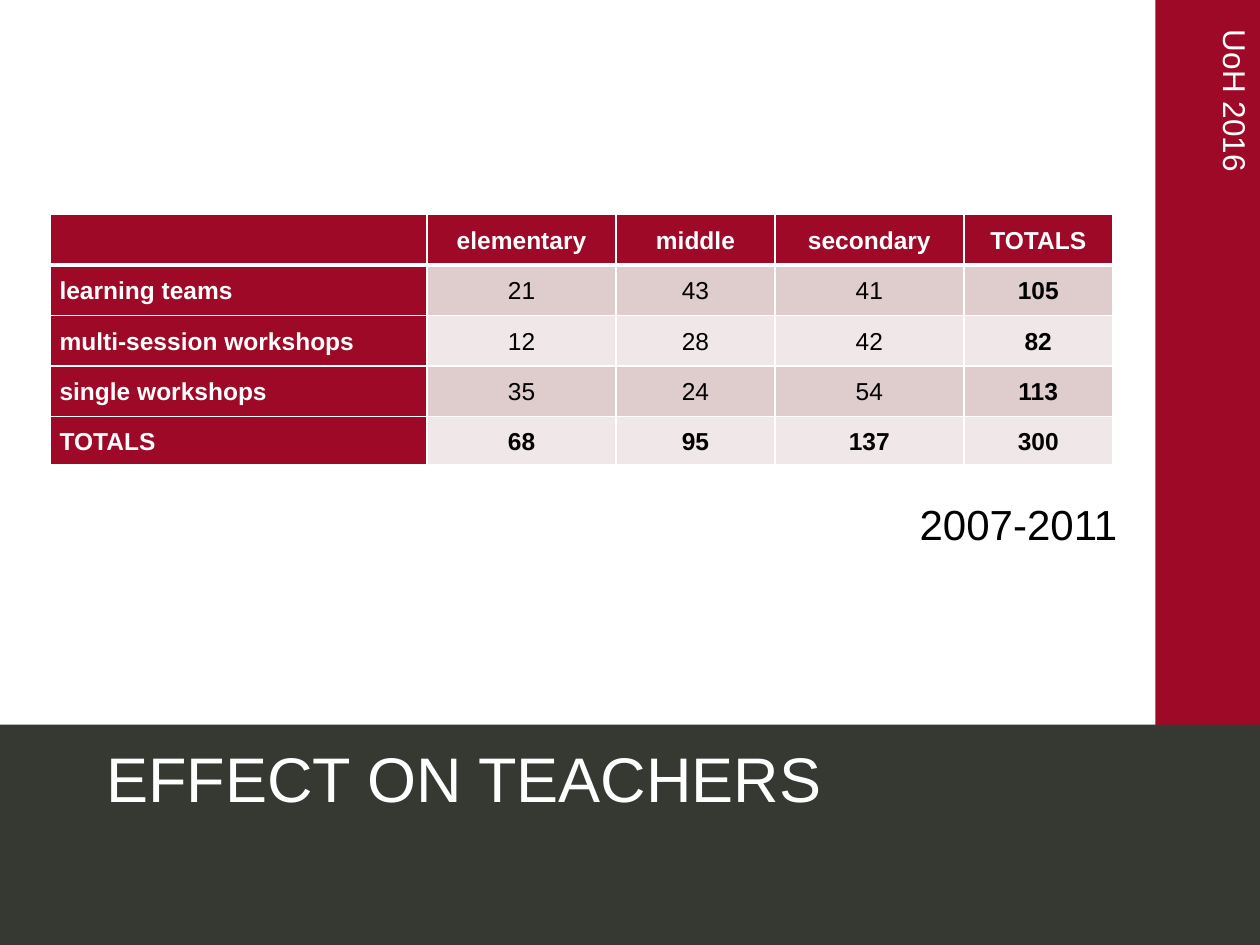
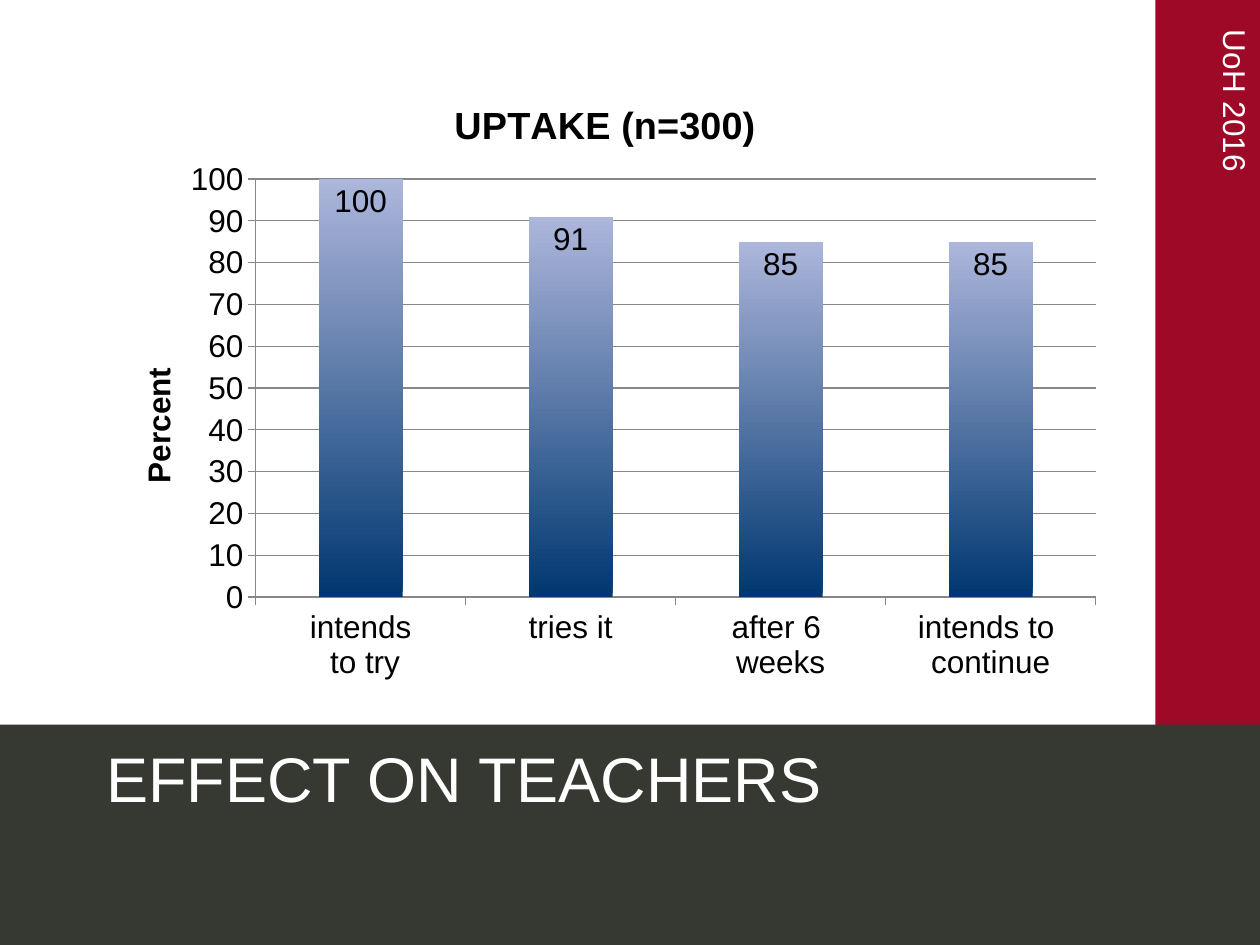
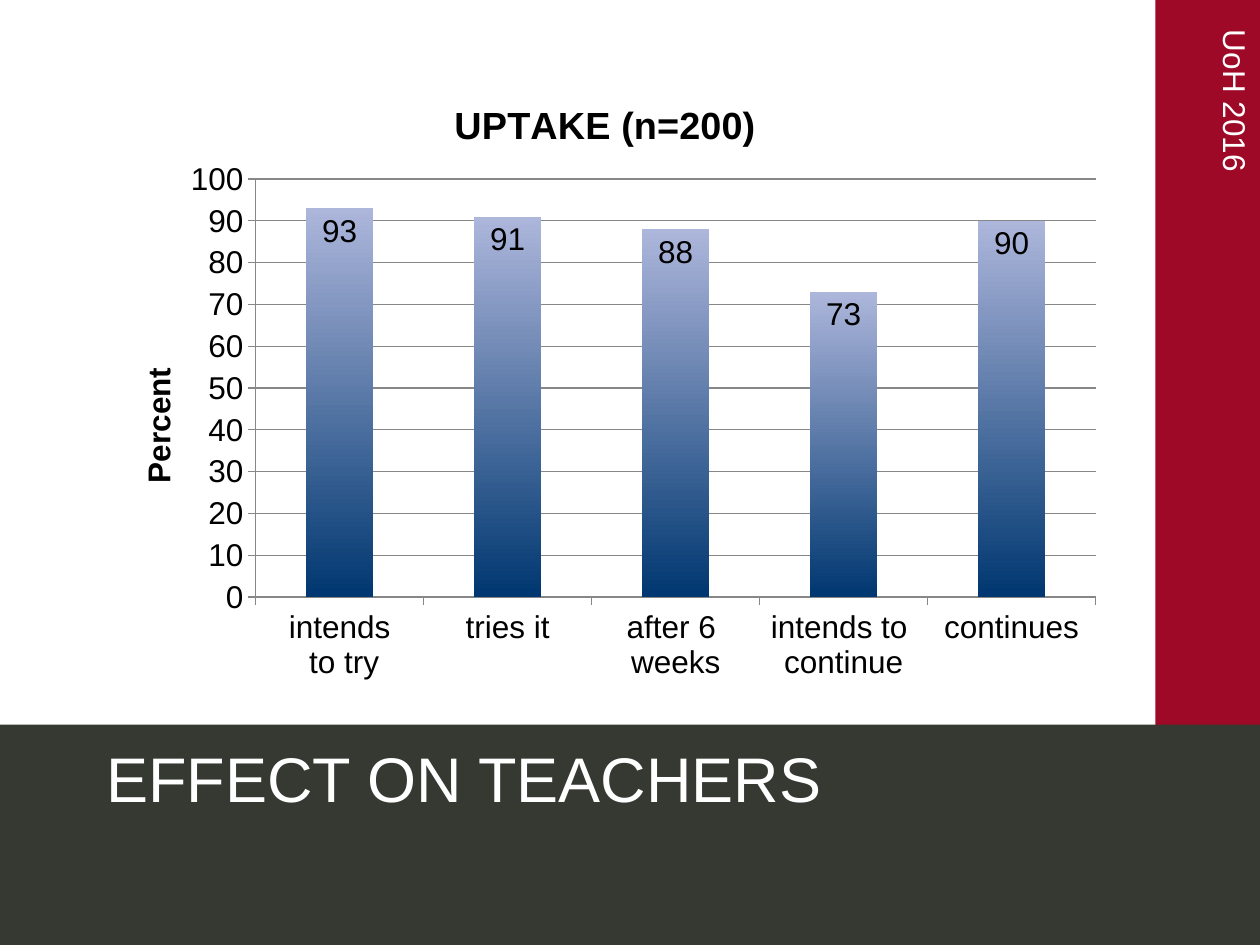
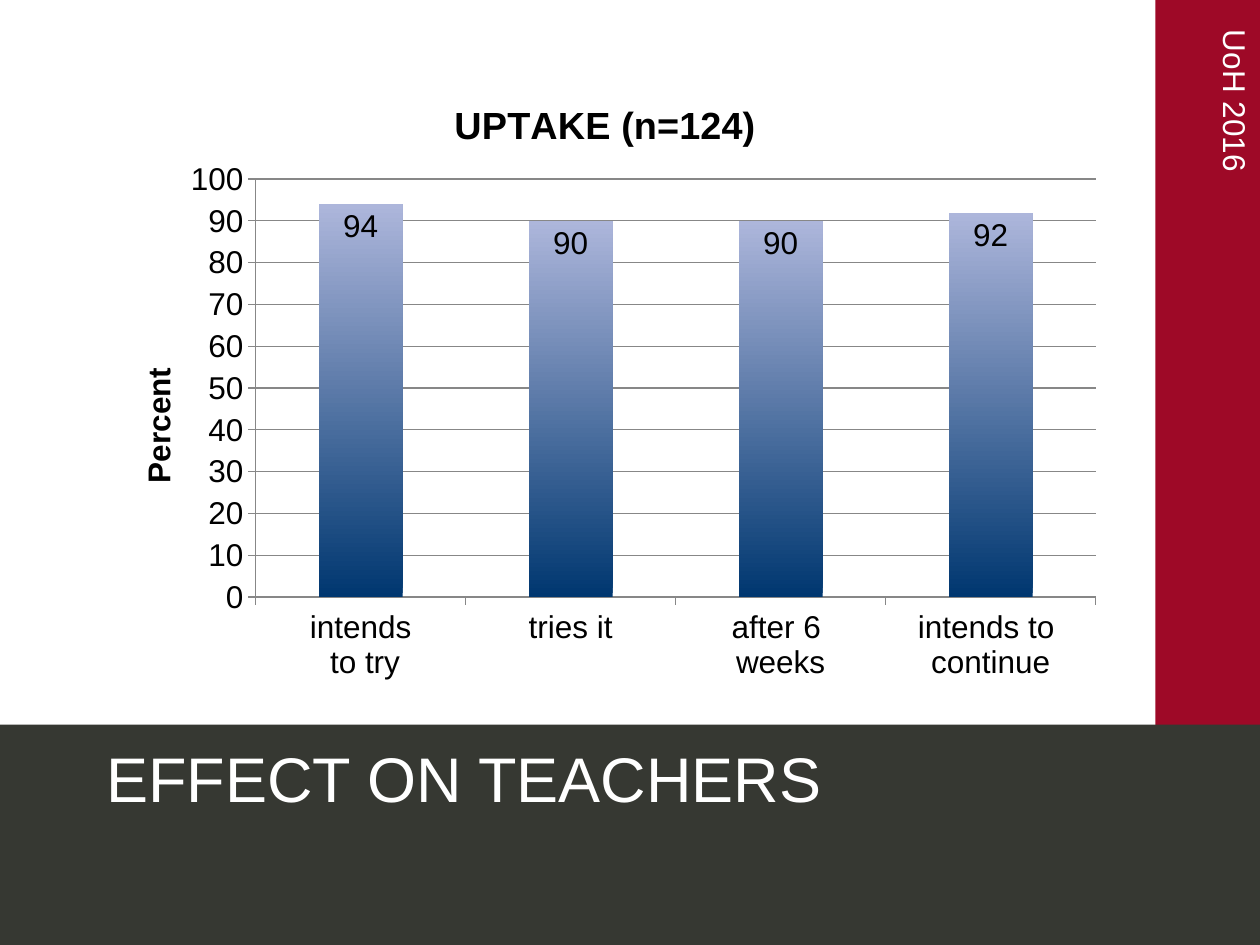
from lxml import etree
from pptx import Presentation
from pptx.chart.data import CategoryChartData
from pptx.dml.color import RGBColor
from pptx.enum.chart import XL_CHART_TYPE, XL_LABEL_POSITION, XL_TICK_MARK
from pptx.enum.shapes import MSO_SHAPE
from pptx.enum.text import MSO_ANCHOR, PP_ALIGN
from pptx.oxml.ns import qn
from pptx.util import Cm, Pt

# Shared style
CRIMSON = RGBColor(0x9E, 0x09, 0x27)
CHARCOAL = RGBColor(0x36, 0x38, 0x32)
WHITE = RGBColor(0xFF, 0xFF, 0xFF)
BLACK = RGBColor(0x00, 0x00, 0x00)
ROSE = RGBColor(0xDF, 0xCC, 0xCD)
PALE_ROSE = RGBColor(0xF0, 0xE7, 0xE8)
GRID_GREY = RGBColor(0x87, 0x87, 0x87)
BAR_BOTTOM = RGBColor(0x00, 0x37, 0x70)
BAR_TOP = RGBColor(0xAD, 0xB6, 0xDB)
FONT = "Arial"

RECTANGLE = MSO_SHAPE.RECTANGLE
COLUMNS = XL_CHART_TYPE.COLUMN_CLUSTERED
INSIDE_END = XL_LABEL_POSITION.INSIDE_END
TICK_OUT = XL_TICK_MARK.OUTSIDE
MIDDLE, TOP = MSO_ANCHOR.MIDDLE, MSO_ANCHOR.TOP
LEFT, CENTER = PP_ALIGN.LEFT, PP_ALIGN.CENTER

# Slide and band geometry in centimetres
SLIDE_W, SLIDE_H = 25.4, 19.05
SIDE_W, TITLE_BAND_H = 2.11, 4.44

# Content
TITLE = "EFFECT ON TEACHERS"
FOOTER = "UoH 2016"
SESSIONS = [
    ["", "elementary", "middle", "secondary", "TOTALS"],
    ["learning teams", "21", "43", "41", "105"],
    ["multi-session workshops", "12", "28", "42", "82"],
    ["single workshops", "35", "24", "54", "113"],
    ["TOTALS", "68", "95", "137", "300"],
]
STAGES = ["intends\n to try", "tries it", "after 6 \nweeks", "intends to \ncontinue"]
UPTAKES = [
    ("UPTAKE (n=300)", STAGES, [100, 91, 85, 85]),
    ("UPTAKE (n=200)", STAGES + ["continues"], [93, 91, 88, 73, 90]),
    ("UPTAKE (n=124)", STAGES, [94, 90, 90, 92]),
]


def style_font(font, size, color, bold=False):
    font.name, font.size, font.bold = FONT, Pt(size), bold
    font.color.rgb = color


def set_layout(parent, index, **fractions):
    """Place a chart part by fractions of the chart's size."""
    for old in parent.findall(qn("c:layout")):
        parent.remove(old)
    layout = etree.Element(qn("c:layout"))
    manual = etree.SubElement(layout, qn("c:manualLayout"))
    settings = {"xMode": "edge", "yMode": "edge", **fractions}
    if "w" in fractions:
        settings = {"layoutTarget": "inner", **settings}
    for tag, value in settings.items():
        etree.SubElement(manual, qn("c:" + tag)).set("val", str(value))
    parent.insert(index, layout)


def set_borders(cell, **widths):
    """Draw white cell borders, with widths in points for L, R, T and B."""
    properties = cell._tc.get_or_add_tcPr()
    for side, width in widths.items():
        line = etree.SubElement(properties, qn("a:ln" + side), w=str(Pt(width)))
        fill = etree.SubElement(line, qn("a:solidFill"))
        etree.SubElement(fill, qn("a:srgbClr"), val=str(WHITE))


class Deck:
    def __init__(self):
        self.prs = Presentation()
        self.prs.slide_width, self.prs.slide_height = Cm(SLIDE_W), Cm(SLIDE_H)
        self.slide = None

    def new_slide(self):
        """Add a slide with the side band, title band, footer and title."""
        self.slide = self.prs.slides.add_slide(self.prs.slide_layouts[6])
        self.band(SLIDE_W - SIDE_W, 0, SIDE_W, SLIDE_H, CRIMSON)
        self.band(0, SLIDE_H - TITLE_BAND_H, SLIDE_W, TITLE_BAND_H, CHARCOAL)
        footer = self.text(FOOTER, 19.94, 4.45, 9.93, 1.02, 18, WHITE)
        footer.rotation = 90
        footer.text_frame.margin_left = Cm(0.61)
        self.text(TITLE, 1.9, 14.61, 22.66, 2.11, 36, WHITE, MIDDLE)

    def band(self, left, top, width, height, color):
        band = self.slide.shapes.add_shape(
            RECTANGLE, Cm(left), Cm(top), Cm(width), Cm(height))
        band.shadow.inherit = False
        band.fill.solid()
        band.fill.fore_color.rgb = color
        band.line.fill.background()

    def text(self, words, left, top, width, height, size, color, anchor=TOP):
        box = self.slide.shapes.add_textbox(Cm(left), Cm(top), Cm(width), Cm(height))
        frame = box.text_frame
        frame.word_wrap = True
        frame.vertical_anchor = anchor
        frame.text = words
        style_font(frame.paragraphs[0].runs[0].font, size, color)
        return box

    def table(self, rows, left, top, col_widths, row_heights):
        table = self.slide.shapes.add_table(
            len(rows), len(rows[0]), Cm(left), Cm(top),
            Cm(sum(col_widths)), Cm(sum(row_heights))).table
        table.horz_banding = False
        for column, width in zip(table.columns, col_widths):
            column.width = Cm(width)
        for row, height in zip(table.rows, row_heights):
            row.height = Cm(height)
        last_row, last_col = len(rows) - 1, len(rows[0]) - 1
        for r, row in enumerate(rows):
            for c, words in enumerate(row):
                heading = r == 0 or c == 0
                cell = table.cell(r, c)
                set_borders(cell, L=1, R=1, T=3 if r == 1 else 1, B=3 if r == 0 else 1)
                cell.fill.solid()
                cell.fill.fore_color.rgb = (
                    CRIMSON if heading else ROSE if r % 2 else PALE_ROSE)
                cell.vertical_anchor = MIDDLE
                cell.margin_left = cell.margin_right = Cm(0.18)
                cell.margin_top = cell.margin_bottom = 0
                cell.text = words
                paragraph = cell.text_frame.paragraphs[0]
                paragraph.alignment = CENTER if c else LEFT
                paragraph.line_spacing = 1.07
                style_font(paragraph.font, 14, WHITE if heading else BLACK)
                for run in paragraph.runs:
                    style_font(run.font, 14, WHITE if heading else BLACK,
                               heading or r == last_row or c == last_col)

    def column_chart(self, title, categories, values, left, top, width, height):
        data = CategoryChartData()
        data.categories = categories
        data.add_series("Series 1", values)
        chart = self.slide.shapes.add_chart(
            COLUMNS, Cm(left), Cm(top), Cm(width), Cm(height), data).chart
        chart.has_legend = False
        style_font(chart.font, 18, BLACK)
        self.chart_title(chart, title, 21.6)
        set_layout(chart._chartSpace.chart.plotArea, 0, x=0.158, y=0.168, w=0.822, h=0.677)

        # Axes
        percent_axis = chart.value_axis
        percent_axis.minimum_scale, percent_axis.maximum_scale = 0, 100
        percent_axis.major_unit = 10
        percent_axis.has_major_gridlines = True
        percent_axis.major_gridlines.format.line.color.rgb = GRID_GREY
        percent_axis.major_gridlines.format.line.width = Pt(0.75)
        for axis in (percent_axis, chart.category_axis):
            axis.major_tick_mark = TICK_OUT
            axis.format.line.color.rgb = GRID_GREY
            axis.format.line.width = Pt(0.75)
            style_font(axis.tick_labels.font, 18, BLACK)
        percent_title = self.chart_title(percent_axis, "Percent", 18)
        body = percent_title.text_frame._txBody.bodyPr
        body.set("rot", "-5400000")
        body.set("vert", "horz")
        set_layout(percent_title._element, 1, x=0.037, y=0.464)

        # Columns and their labels
        plot = chart.plots[0]
        plot.gap_width = 150
        plot.vary_by_categories = False
        fill = plot.series[0].format.fill
        fill.gradient()
        fill.gradient_angle = 90
        for stop, color in zip(fill.gradient_stops, (BAR_BOTTOM, BAR_TOP)):
            stop.color.rgb = color
        plot.has_data_labels = True
        labels = plot.data_labels
        labels.show_value = True
        labels.position = INSIDE_END
        style_font(labels.font, 18, BLACK)

    def chart_title(self, owner, words, size):
        """Title a chart or an axis in bold."""
        owner.has_title = True
        title = owner.chart_title if hasattr(owner, "chart_title") else owner.axis_title
        title.text_frame.text = words
        style_font(title.text_frame.paragraphs[0].runs[0].font, size, BLACK, True)
        return title


def main():
    deck = Deck()

    # Number of teachers by session type and school level
    deck.new_slide()
    deck.table(SESSIONS, 1.02, 4.32, [7.59, 3.81, 3.2, 3.81, 3.0], [1.02] * 4 + [0.97])
    deck.text("2007-2011", 18.29, 9.93, 5.41, 1.27, 24, BLACK)

    # Uptake in each group of teachers
    for title, stages, percents in UPTAKES:
        deck.new_slide()
        deck.column_chart(title, stages, percents, 1.9, 1.52, 20.6, 12.45)

    deck.prs.save("out.pptx")


if __name__ == "__main__":
    main()
